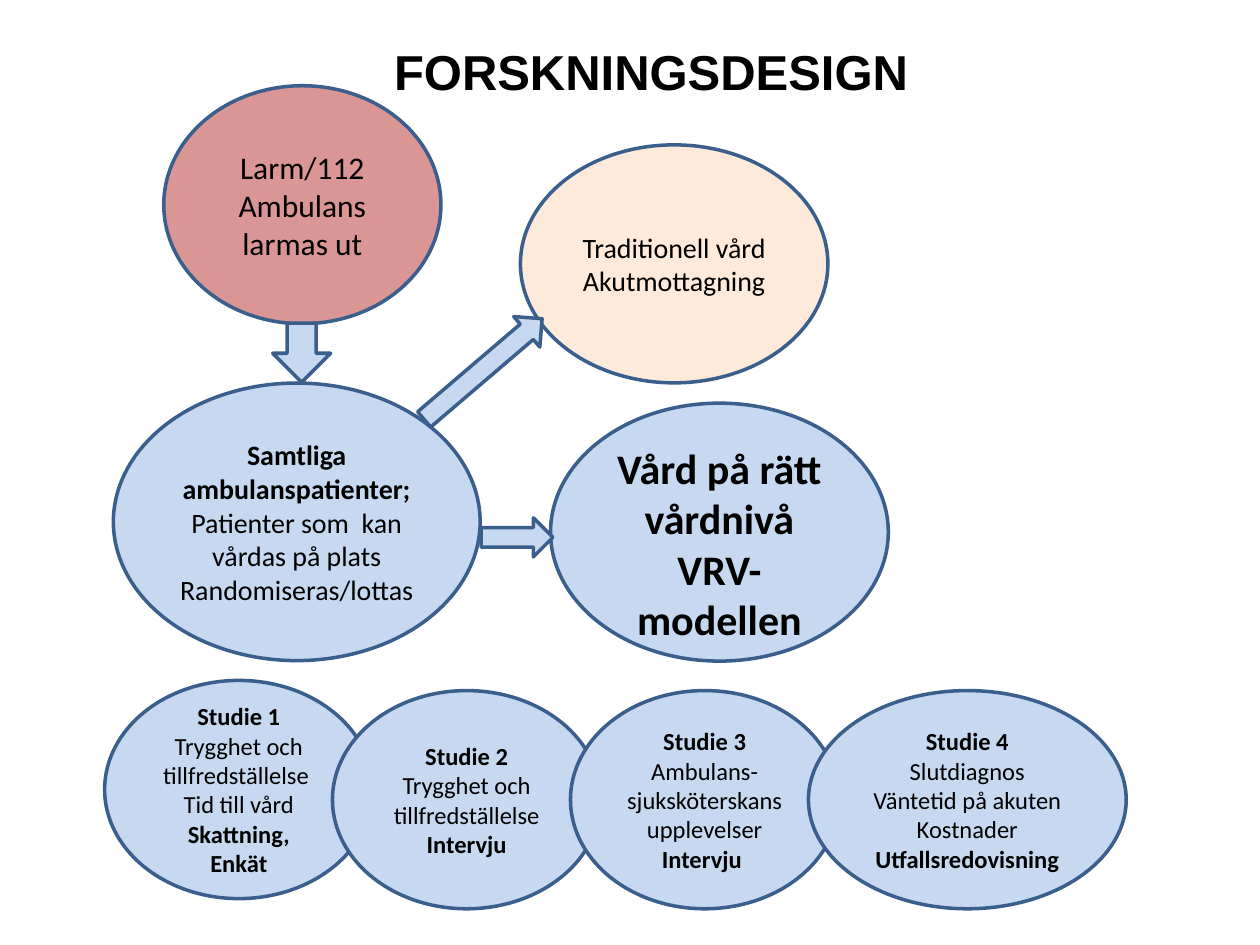
"""Build the research design slide: patient flow above, four studies below."""
from pptx import Presentation
from pptx.dml.color import RGBColor
from pptx.enum.shapes import MSO_SHAPE
from pptx.enum.text import MSO_ANCHOR, PP_ALIGN
from pptx.util import Pt

ELLIPSE, ARROW = MSO_SHAPE.OVAL, MSO_SHAPE.RIGHT_ARROW
CENTER, LEFT = PP_ALIGN.CENTER, PP_ALIGN.LEFT
MIDDLE, TOP = MSO_ANCHOR.MIDDLE, MSO_ANCHOR.TOP
BLACK = RGBColor(0x00, 0x00, 0x00)
OUTLINE = RGBColor(0x3A, 0x5F, 0x8C)
BLUE = RGBColor(0xC6, 0xD9, 0xF1)
RED = RGBColor(0xD9, 0x96, 0x94)
PEACH = RGBColor(0xFD, 0xEA, 0xDA)
BOLD, PLAIN = True, False

TITLE = "FORSKNINGSDESIGN"

FLOW = [
    ((93.6, 49, 158.4, 136), RED, 18, 3.6,
     [[("Larm/112", PLAIN)], [("Ambulans larmas ut", PLAIN)]]),
    ((64.8, 218.9, 209.6, 158.6), BLUE, 16, 3.6,
     [[("Samtliga ambulanspatienter; ", BOLD),
       ("Patienter som  kan vårdas på plats", PLAIN)],
      [("Randomiseras/lottas", PLAIN)]]),
    ((314.6, 230.4, 193, 147.4), BLUE, 24, 16,
     [[("Vård på rätt vårdnivå VRV-modellen", BOLD)]]),
    ((297.4, 82.8, 175.7, 136), PEACH, 16, 3.6,
     [[("Traditionell vård", PLAIN)], [("Akutmottagning", PLAIN)]]),
]

STUDIES = [
    [[("Studie 1", BOLD), (" Trygghet och tillfredställelse ", PLAIN)],
     [("Tid till vård", PLAIN)], [("Skattning,", BOLD)], [("Enkät", BOLD)]],
    [[("Studie 2", BOLD)], [("Trygghet och tillfredställelse", PLAIN)],
     [("Intervju", BOLD)]],
    [[("Studie 3", BOLD)], [("Ambulans-sjuksköterskans", PLAIN)],
     [("upplevelser", PLAIN)], [("Intervju ", BOLD)]],
    [[("Studie 4", BOLD)], [("Slutdiagnos", PLAIN)],
     [("Väntetid på akuten", PLAIN)], [("Kostnader", PLAIN)],
     [("Utfallsredovisning", BOLD)]],
]
STUDY_LEFT, STUDY_STEP = 190, 136
STUDY_WIDTH, LAST_WIDTH, STUDY_HEIGHT = 153.4, 181.6, 124.7

ARROWS = [
    ((231.8, 199.4, 88.6, 23), 319.5),
    ((275, 295.9, 41, 22.3), 0),
    ((155.5, 185, 33.8, 33.1), 90),
]


def add_outlined(slide, kind, box, fill):
    shape = slide.shapes.add_shape(kind, *map(Pt, box))
    shape.shadow.inherit = False
    shape.fill.solid()
    shape.fill.fore_color.rgb = fill
    shape.line.color.rgb = OUTLINE
    shape.line.width = Pt(2)
    return shape


def style(paragraph, font_name, size, align):
    paragraph.alignment = align
    paragraph.font.name = font_name
    paragraph.font.size = Pt(size)
    paragraph.font.color.rgb = BLACK


def add_bubble(slide, box, fill, size, top_margin, paragraphs):
    frame = add_outlined(slide, ELLIPSE, box, fill).text_frame
    frame.word_wrap = True
    frame.vertical_anchor = MIDDLE
    frame.margin_top = Pt(top_margin)
    for index, runs in enumerate(paragraphs):
        paragraph = frame.add_paragraph() if index else frame.paragraphs[0]
        style(paragraph, "Calibri", size, CENTER)
        for text, bold in runs:
            run = paragraph.add_run()
            run.text = text
            if len(runs) > 1:
                run.font.bold = bold
            else:
                paragraph.font.bold = bold


def add_title(slide):
    title = slide.shapes.title
    title.left, title.top, title.width, title.height = map(Pt, (218, 20.2, 351.4, 41))
    frame = title.text_frame
    frame.text = TITLE
    frame.vertical_anchor = TOP
    style(frame.paragraphs[0], "Arial", 28, LEFT)
    frame.paragraphs[0].font.bold = True


def main():
    deck = Presentation()
    deck.slide_width, deck.slide_height = Pt(720), Pt(540)
    slide = deck.slides.add_slide(deck.slide_layouts[5])
    add_title(slide)
    for bubble in FLOW:
        add_bubble(slide, *bubble)
    for index, paragraphs in enumerate(STUDIES):
        left = STUDY_LEFT + (index - 1) * STUDY_STEP if index else 59.8
        top = 394.6 if index else 388.8
        width = LAST_WIDTH if index == len(STUDIES) - 1 else STUDY_WIDTH
        add_bubble(slide, (left, top, width, STUDY_HEIGHT), BLUE, 14, 3.6, paragraphs)
    for box, rotation in ARROWS:
        add_outlined(slide, ARROW, box, BLUE).rotation = rotation
    deck.save("out.pptx")


if __name__ == "__main__":
    main()
